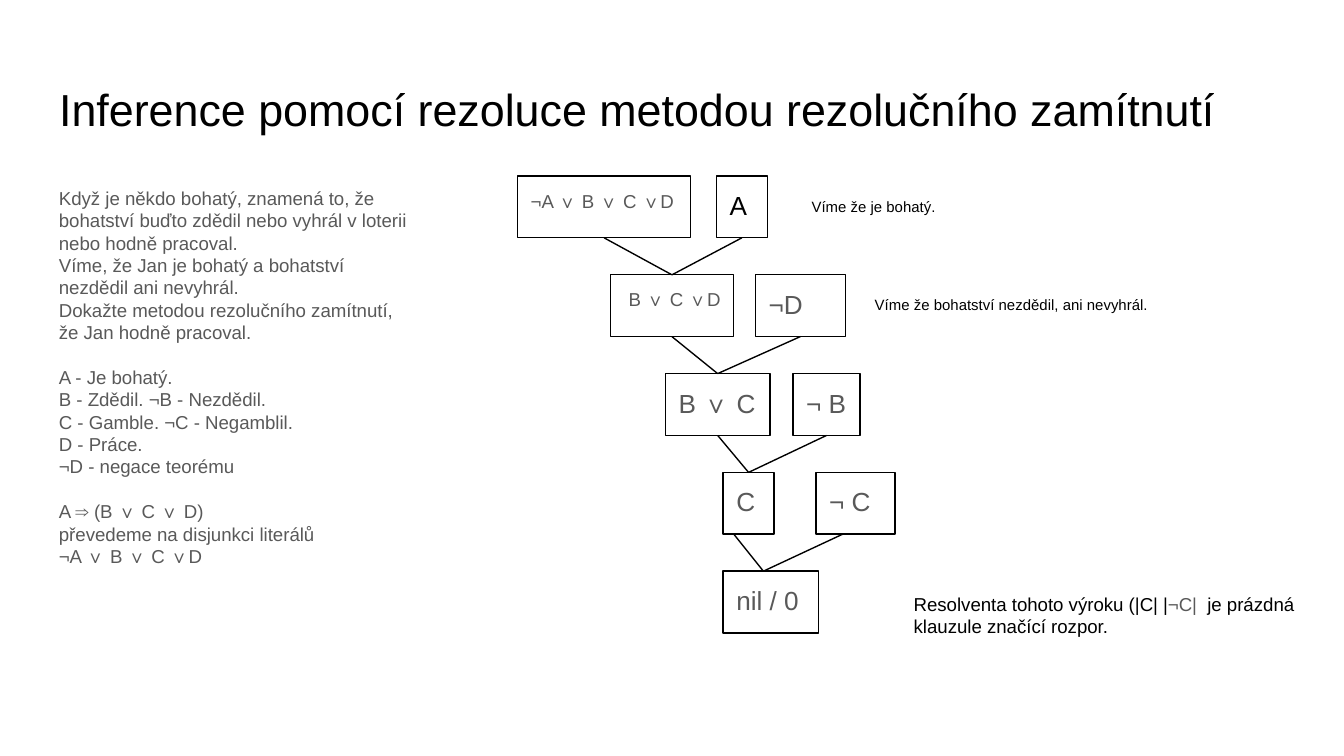
from pptx import Presentation
from pptx.dml.color import RGBColor
from pptx.enum.shapes import MSO_CONNECTOR, MSO_SHAPE
from pptx.enum.text import MSO_ANCHOR, MSO_AUTO_SIZE, PP_ALIGN
from pptx.oxml.ns import qn
from pptx.util import Inches, Pt

STRAIGHT = MSO_CONNECTOR.STRAIGHT
RECTANGLE = MSO_SHAPE.RECTANGLE
TOP, MIDDLE = MSO_ANCHOR.TOP, MSO_ANCHOR.MIDDLE
LEFT = PP_ALIGN.LEFT
NO_AUTOFIT = MSO_AUTO_SIZE.NONE
TOP_SITE, BOTTOM_SITE = 0, 2

BLACK = RGBColor(0x00, 0x00, 0x00)
GRAY = RGBColor(0x59, 0x59, 0x59)
FONT = "Arial"
TITLE_ONLY = 5

# The grid has square cells of a tenth of an inch: 100 columns by 56.25 rows.
CELL = 0.1
COLUMNS, ROWS = 100, 56.25
FIRST_LEVEL, LEVEL_STEP, BOX_HEIGHT = 13.1, 7.35, 4.6

TITLE = "Inference pomocí rezoluce metodou rezolučního zamítnutí"

TASK_BLOCKS = [
    ["Když je někdo bohatý, znamená to, že bohatství buďto zdědil nebo vyhrál "
     "v loterii nebo hodně pracoval.",
     "Víme, že Jan je bohatý a bohatství nezdědil ani nevyhrál.",
     "Dokažte metodou rezolučního zamítnutí, že Jan hodně pracoval."],
    ["A - Je bohatý.",
     "B - Zdědil. ¬B - Nezdědil.",
     "C - Gamble. ¬C - Negamblil.",
     "D - Práce.",
     "¬D - negace teorému"],
    ["A ⇒ (B ∨ C ∨ D)",
     "převedeme na disjunkci literálů",
     "¬A ∨ B ∨ C ∨D"],
]

# Each level: clauses as (text, left, width, font size, colour).
LEVELS = [
    [("¬A ∨ B ∨ C ∨D", 38.5, 12.9, 10, GRAY), ("A", 53.3, 3.8, 14, BLACK)],
    [(" B ∨ C ∨D", 45.4, 9.2, 10, GRAY), ("¬D", 56.2, 6.7, 14, GRAY)],
    [("B ∨ C", 49.5, 7.8, 14, GRAY), ("¬ B", 59, 5, 14, GRAY)],
    [("C", 53.8, 3.8, 14, GRAY), ("¬ C", 60.7, 5.9, 14, GRAY)],
    [("nil / 0", 53.8, 7.1, 14, GRAY)],
]
LAST_STARTS, LAST_MEETING = (54.6, 62.7), 56.8

# Each note: left, top, width, height, font size, runs.
NOTES = [
    (59.4, 13.7, 12, 3.6, 8, [("Víme že je bohatý.", BLACK)]),
    (64.1, 21, 23.1, 3.6, 8,
     [("Víme že bohatství nezdědil, ani nevyhrál.", BLACK)]),
    (67, 43.1, 33, 5.8, 10,
     [("Resolventa tohoto výroku (|C| |", BLACK), ("¬C|", GRAY),
      ("  je prázdná klauzule značící rozpor.", BLACK)]),
]


def cells(count):
    return Inches(count * CELL)


class SlideBuilder:
    def __init__(self, presentation):
        self.slide = presentation.slides.add_slide(
            presentation.slide_layouts[TITLE_ONLY])
        self.shapes = self.slide.shapes

    def prepare_frame(self, text_frame, anchor=TOP):
        text_frame.word_wrap = True
        text_frame.auto_size = NO_AUTOFIT
        text_frame.vertical_anchor = anchor
        text_frame.margin_left = text_frame.margin_right = cells(1)
        text_frame.margin_top = text_frame.margin_bottom = cells(1)

    def format_run(self, run, size, color):
        run.font.name = FONT
        run.font.size = Pt(size)
        run.font.color.rgb = color

    def fill_paragraph(self, paragraph, runs, size):
        paragraph.alignment = LEFT
        for text, color in runs:
            run = paragraph.add_run()
            run.text = text
            self.format_run(run, size, color)

    def title(self, text, left, top, width, height):
        title = self.shapes.title
        title.left, title.top = cells(left), cells(top)
        title.width, title.height = cells(width), cells(height)
        self.prepare_frame(title.text_frame, MIDDLE)
        self.fill_paragraph(title.text_frame.paragraphs[0], [(text, BLACK)], 24)

    def text_box(self, left, top, width, height):
        text_frame = self.shapes.add_textbox(
            *map(cells, (left, top, width, height))).text_frame
        self.prepare_frame(text_frame)
        return text_frame

    def note(self, left, top, width, height, size, runs):
        text_frame = self.text_box(left, top, width, height)
        self.fill_paragraph(text_frame.paragraphs[0], runs, size)

    def text_blocks(self, blocks, left, top, width, height):
        """Write blocks of paragraphs with one line of space between blocks."""
        text_frame = self.text_box(left, top, width, height)
        paragraph = text_frame.paragraphs[0]
        for block_index, block in enumerate(blocks):
            for line_index, line in enumerate(block):
                if block_index or line_index:
                    paragraph = text_frame.add_paragraph()
                self.fill_paragraph(paragraph, [(line, GRAY)], 10)
                paragraph.line_spacing = Pt(12)
                starts_block = block_index and not line_index
                paragraph.space_before = Pt(12 if starts_block else 0)

    def clause(self, level, text, left, width, size, color):
        top = FIRST_LEVEL + level * LEVEL_STEP
        shape = self.shapes.add_shape(
            RECTANGLE, *map(cells, (left, top, width, BOX_HEIGHT)))
        shape.shadow.inherit = False
        shape.fill.background()
        shape.line.color.rgb = BLACK
        shape.line.width = Pt(0.75)
        self.prepare_frame(shape.text_frame)
        self.fill_paragraph(shape.text_frame.paragraphs[0], [(text, color)], size)
        return shape

    def line(self, start_x, start_y, end_x, end_y):
        connector = self.shapes.add_connector(
            STRAIGHT, start_x, start_y, end_x, end_y)
        connector.line.color.rgb = BLACK
        connector.line.width = Pt(0.75)
        properties = connector._element.spPr
        properties.append(properties.makeelement(qn("a:effectLst"), {}))
        return connector

    def join(self, parent, resolvent):
        connector = self.line(0, 0, 0, 0)
        connector.begin_connect(parent, BOTTOM_SITE)
        connector.end_connect(resolvent, TOP_SITE)


def main():
    presentation = Presentation()
    presentation.slide_width = cells(COLUMNS)
    presentation.slide_height = cells(ROWS)
    builder = SlideBuilder(presentation)

    builder.title(TITLE, 3.4, 4.9, 93.2, 6.3)
    builder.text_blocks(TASK_BLOCKS, 3.4, 12.9, 28.6, 35.7)

    levels = [[builder.clause(index, *clause) for clause in level]
              for index, level in enumerate(LEVELS)]
    for parents, resolvents in zip(levels[:-2], levels[1:-1]):
        for parent in parents:
            builder.join(parent, resolvents[0])

    # The last pair meets left of the middle of the empty clause.
    for parent, start in zip(levels[-2], LAST_STARTS):
        builder.line(cells(start), parent.top + parent.height,
                     cells(LAST_MEETING), levels[-1][0].top)

    for note in NOTES:
        builder.note(*note)
    presentation.save("out.pptx")


if __name__ == "__main__":
    main()
